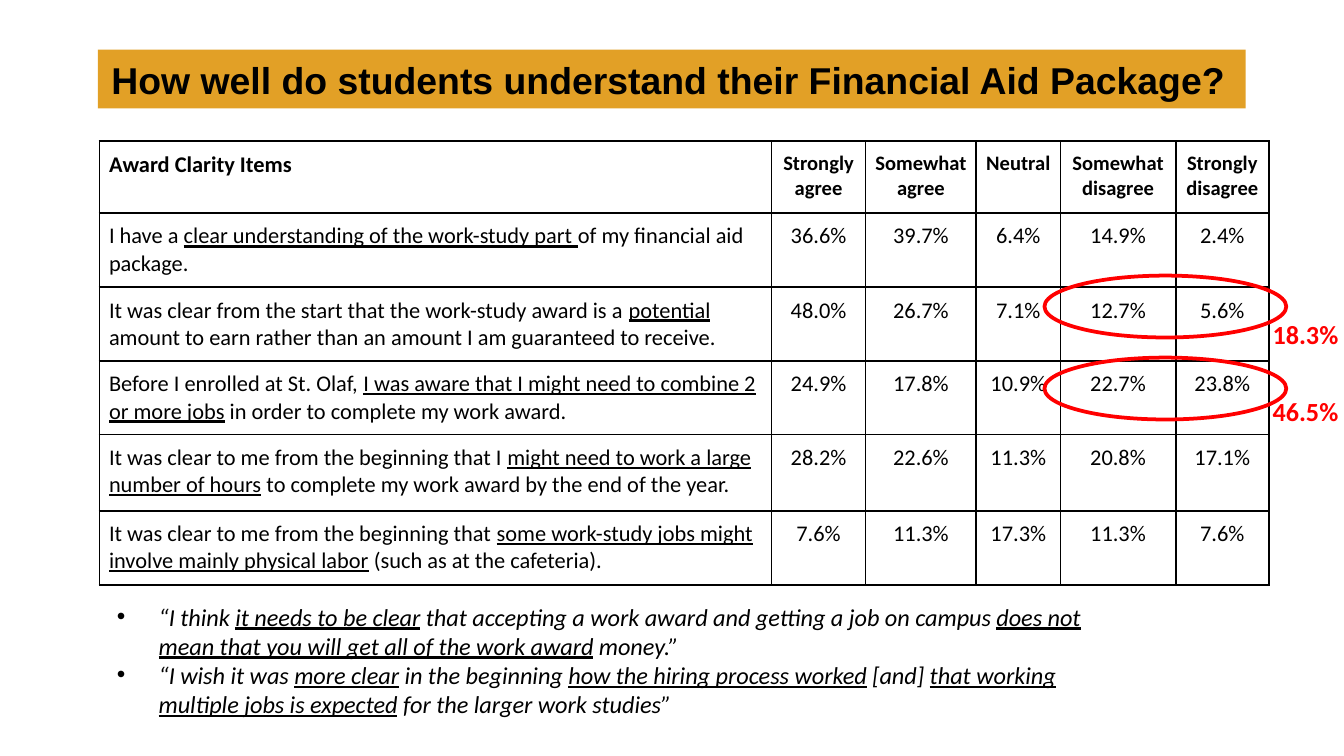
from dataclasses import dataclass

import pptx
import pptx.dml.color
import pptx.enum.shapes
import pptx.enum.text
import pptx.oxml
import pptx.oxml.ns
import pptx.util

Cm = pptx.util.Cm
Pt = pptx.util.Pt
ALIGN = pptx.enum.text.PP_ALIGN
COLOURS = {"ink": "000000", "gold": "E2A026", "red": "FF0000"}
NAMESPACE = pptx.oxml.ns.nsdecls("a")


@dataclass
class Style:
    size: float
    font: str = "Calibri"
    colour: str = "ink"
    bold: bool = False
    italic: bool = False


@dataclass
class Item:
    statement: str
    shares: tuple
    height: float


@dataclass
class Callout:
    total: str
    ellipse_top: float
    label_top: float


HEADING = Style(12, bold=True)
SCALE = Style(11, bold=True)
BODY = Style(12)
TOTAL = Style(14, colour="red", bold=True)
QUOTE = Style(13, italic=True)
TITLE = Style(20, font="Arial", bold=True)

COLUMN_WIDTHS = (12.7, 1.78, 2.09, 1.59, 2.18, 1.76)
HEADER_HEIGHT = 1.36
SCALE_LABELS = ("Strongly agree", "Somewhat agree", "Neutral", "Somewhat disagree", "Strongly disagree")

# Underscores enclose underlined words.
ITEMS = (
    Item("I have a _clear understanding of the work-study part _of my financial aid package.",
         (36.6, 39.7, 6.4, 14.9, 2.4), 1.4),
    Item("It was clear from the start that the work-study award is a _potential_ amount to earn "
         "rather than an amount I am guaranteed to receive.",
         (48.0, 26.7, 7.1, 12.7, 5.6), 1.39),
    Item("Before I enrolled at St. Olaf, _I was aware that I might need to combine 2 or more jobs_ "
         "in order to complete my work award.",
         (24.9, 17.8, 10.9, 22.7, 23.8), 1.39),
    Item("It was clear to me from the beginning that I _might need to work a large number of hours_ "
         "to complete my work award by the end of the year.",
         (28.2, 22.6, 11.3, 20.8, 17.1), 1.44),
    Item("It was clear to me from the beginning that _some work-study jobs might involve mainly "
         "physical labor_ (such as at the cafeteria).",
         (7.6, 11.3, 17.3, 11.3, 7.6), 1.4),
)
CALLOUTS = (Callout("18.3%", 5.21, 5.89), Callout("46.5%", 6.76, 7.34))
QUOTES = (
    "“I think _it needs to be clear_ that accepting a work award and getting a job on campus "
    "_does not mean that you will get all of the work award_ money.”",
    "“I wish it was _more clear_ in the beginning _how the hiring process worked_ [and] "
    "_that working multiple jobs is expected_ for the larger work studies”",
)


def colour(name: str) -> pptx.dml.color.RGBColor:
    return pptx.dml.color.RGBColor.from_string(COLOURS[name])


def write(para, text: str, style: Style, align=ALIGN.LEFT) -> None:
    para.alignment = align
    for position, words in enumerate(text.split("_")):
        if not words:
            continue
        span = para.add_run()
        span.text = words
        span.font.name = style.font
        span.font.size = Pt(style.size)
        span.font.bold = style.bold
        span.font.italic = style.italic
        span.font.underline = position % 2 == 1
        span.font.color.rgb = colour(style.colour)


def add_bullet(para) -> None:
    properties = para._p.get_or_add_pPr()
    properties.set("marL", str(Cm(0.79)))
    properties.set("indent", str(Cm(-0.79)))
    for element in (f'<a:buClr {NAMESPACE}><a:srgbClr val="{COLOURS["ink"]}"/></a:buClr>',
                    f'<a:buFont {NAMESPACE} typeface="Arial"/>',
                    f'<a:buChar {NAMESPACE} char="•"/>'):
        properties.append(pptx.oxml.parse_xml(element))


def fill_cell(cell, text: str, style: Style, align=ALIGN.LEFT) -> None:
    cell.margin_left = cell.margin_right = cell.margin_top = cell.margin_bottom = Cm(0.18)
    properties = cell._tc.get_or_add_tcPr()
    for side in ("lnL", "lnR", "lnT", "lnB"):
        properties.append(pptx.oxml.parse_xml(
            f'<a:{side} {NAMESPACE} w="{Pt(1)}"><a:solidFill>'
            f'<a:srgbClr val="{COLOURS["ink"]}"/></a:solidFill></a:{side}>'))
    cell.fill.background()
    write(cell.text_frame.paragraphs[0], text, style, align)


def add_title(page, text: str) -> None:
    title = page.shapes.title
    title.left, title.top, title.width, title.height = Cm(1.85), Cm(0.94), Cm(21.69), Cm(1.11)
    title.fill.solid()
    title.fill.fore_color.rgb = colour("gold")
    frame = title.text_frame
    frame.word_wrap = True
    frame.auto_size = pptx.enum.text.MSO_AUTO_SIZE.NONE
    frame.vertical_anchor = pptx.enum.text.MSO_ANCHOR.MIDDLE
    write(frame.paragraphs[0], text, TITLE)


def add_survey_table(page) -> None:
    table = page.shapes.add_table(
        len(ITEMS) + 1, len(COLUMN_WIDTHS), Cm(1.88), Cm(2.67),
        Cm(sum(COLUMN_WIDTHS)), Cm(HEADER_HEIGHT + sum(item.height for item in ITEMS))).table
    table.first_row = table.horz_banding = False
    for column, width in zip(table.columns, COLUMN_WIDTHS):
        column.width = Cm(width)
    table.rows[0].height = Cm(HEADER_HEIGHT)
    fill_cell(table.cell(0, 0), "Award Clarity Items", HEADING)
    for column, label in enumerate(SCALE_LABELS, 1):
        fill_cell(table.cell(0, column), label, SCALE, ALIGN.CENTER)
    for row, item in enumerate(ITEMS, 1):
        table.rows[row].height = Cm(item.height)
        fill_cell(table.cell(row, 0), item.statement, BODY)
        for column, share in enumerate(item.shares, 1):
            fill_cell(table.cell(row, column), f"{share:.1f}%", BODY, ALIGN.CENTER)


def add_callout(page, callout: Callout) -> None:
    ellipse = page.shapes.add_shape(
        pptx.enum.shapes.MSO_SHAPE.OVAL, Cm(19.74), Cm(callout.ellipse_top), Cm(4.57), Cm(1.17))
    ellipse.shadow.inherit = False
    ellipse.fill.background()
    ellipse.line.color.rgb = colour("red")
    ellipse.line.width = Pt(2)
    box = page.shapes.add_textbox(Cm(23.8), Cm(callout.label_top), Cm(1.9), Cm(0.86))
    box.text_frame.word_wrap = True
    write(box.text_frame.paragraphs[0], callout.total, TOTAL)


def add_quotes(page) -> None:
    box = page.shapes.add_textbox(Cm(1.96), Cm(11.25), Cm(19.61), Cm(2.49))
    frame = box.text_frame
    frame.word_wrap = True
    for position, quote in enumerate(QUOTES):
        para = frame.add_paragraph() if position else frame.paragraphs[0]
        add_bullet(para)
        write(para, quote, QUOTE)


def main() -> None:
    deck = pptx.Presentation()
    deck.slide_width, deck.slide_height = Cm(25.4), Cm(14.29)
    page = deck.slides.add_slide(deck.slide_layouts[5])
    add_title(page, "How well do students understand their Financial Aid Package?")
    add_survey_table(page)
    for callout in CALLOUTS:
        add_callout(page, callout)
    add_quotes(page)
    deck.save("out.pptx")


if __name__ == "__main__":
    main()
